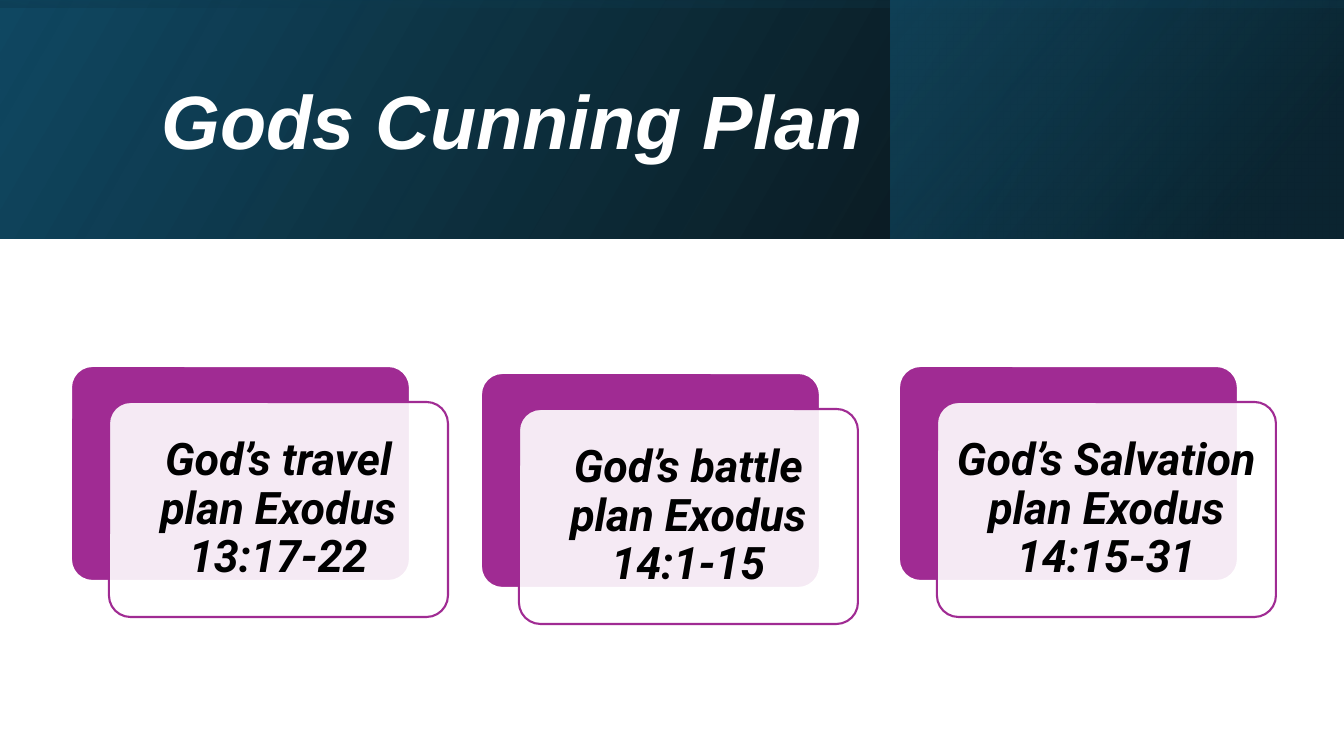
from lxml.etree import SubElement
from pptx import Presentation
from pptx.dml.color import RGBColor
from pptx.enum.shapes import MSO_SHAPE as Shape
from pptx.enum.text import MSO_ANCHOR as Anchor, PP_ALIGN as Align
from pptx.oxml.ns import qn
from pptx.util import Pt

EMU_PER_PX = 914400 / 100.8
COLORS = {
    "white": "FFFFFF",
    "black": "000000",
    "purple": "A02B93",
    "deep_teal": "104862",
    "night": "0B3041",
    "teal": "156082",
}


def px(length):
    return round(length * EMU_PER_PX)


def rgb(name):
    return RGBColor.from_string(COLORS[name])


def set_alpha(color_element, percent):
    SubElement(color_element, qn("a:alpha"), val=str(percent * 1000))


def write(frame, text, *, font, size, color, align, inset=(10, 5)):
    """Fill a text frame with one bold italic paragraph."""
    frame.word_wrap = True
    frame.vertical_anchor = Anchor.MIDDLE
    frame.margin_left = frame.margin_right = px(inset[0])
    frame.margin_top = frame.margin_bottom = px(inset[1])
    paragraph = frame.paragraphs[0]
    paragraph.alignment = align
    paragraph.line_spacing = 0.9
    run = paragraph.add_run()
    run.text = text
    run.font.name = font
    run.font.size = Pt(size)
    run.font.bold = run.font.italic = True
    run.font.color.rgb = rgb(color)


class PlanSlide:
    def __init__(self, presentation):
        self.slide = presentation.slides.add_slide(presentation.slide_layouts[5])
        self.shapes = self.slide.shapes
        self.heading_font = "Arial"
        self.card_font = "Roboto"

    def title(self, text, left, top, width, height):
        title = self.shapes.title
        title.left, title.top = px(left), px(top)
        title.width, title.height = px(width), px(height)
        write(title.text_frame, text, font=self.heading_font, size=54,
              color="white", align=Align.LEFT)
        # The title sits in front of the banner.
        self.shapes.element.append(title.element)

    def shape(self, kind, left, top, width, height):
        shape = self.shapes.add_shape(kind, px(left), px(top), px(width), px(height))
        shape.shadow.inherit = False
        return shape

    def banner_layer(self, left, top, width, height, stops, angle, rotation=0):
        """Add a mirrored gradient; stops are (position, color, opacity) in percent."""
        layer = self.shape(Shape.RECTANGLE, left, top, width, height)
        layer.rotation = rotation
        layer.line.fill.background()
        layer.element.spPr.find(qn("a:xfrm")).set("flipH", "1")
        layer.fill.gradient()
        gradient = layer.element.spPr.find(qn("a:gradFill"))
        gradient.find(qn("a:lin")).set("ang", str(angle * 60000))
        stop_list = gradient.find(qn("a:gsLst"))
        stop_list.clear()
        for position, color, opacity in stops:
            stop = SubElement(stop_list, qn("a:gs"), pos=str(position * 1000))
            set_alpha(SubElement(stop, qn("a:srgbClr"), val=COLORS[color]), opacity)

    def panel(self, left, top, fill, line, opacity=100):
        panel = self.shape(Shape.ROUNDED_RECTANGLE, left, top, 339, 215)
        panel.adjustments[0] = 0.1
        panel.fill.solid()
        panel.fill.fore_color.rgb = rgb(fill)
        if opacity < 100:
            set_alpha(panel.element.spPr.find(qn("a:solidFill"))[0], opacity)
        panel.line.color.rgb = rgb(line)
        panel.line.width = Pt(1.5)

    def card(self, text, left, top):
        self.panel(left, top, "purple", "white")
        self.panel(left + 38, top + 36, "white", "purple", opacity=90)
        label = self.shapes.add_textbox(px(left + 44), px(top + 42), px(327), px(203))
        write(label.text_frame, text, font=self.card_font, size=32,
              color="black", align=Align.CENTER, inset=(13, 13))


def main():
    presentation = Presentation()
    presentation.slide_width, presentation.slide_height = px(1344), px(756)
    plan = PlanSlide(presentation)

    plan.banner_layer(0, 0, 1344, 239,
                      [(0, "black", 96), (100, "deep_teal", 100)], 330)
    plan.banner_layer(891, 0, 452, 239,
                      [(19, "night", 68), (100, "teal", 48)], 320)
    plan.banner_layer(552, -552, 239, 1344,
                      [(23, "deep_teal", 16), (99, "black", 45)], 350, rotation=270)
    plan.title("Gods Cunning Plan", 152, 38, 1072, 173)

    for passage, left, top in (
        ("God’s travel plan Exodus 13:17-22", 71, 366),
        ("God’s battle plan Exodus 14:1-15", 481, 373),
        ("God’s Salvation plan Exodus 14:15-31", 899, 366),
    ):
        plan.card(passage, left, top)

    presentation.save("out.pptx")


if __name__ == "__main__":
    main()
